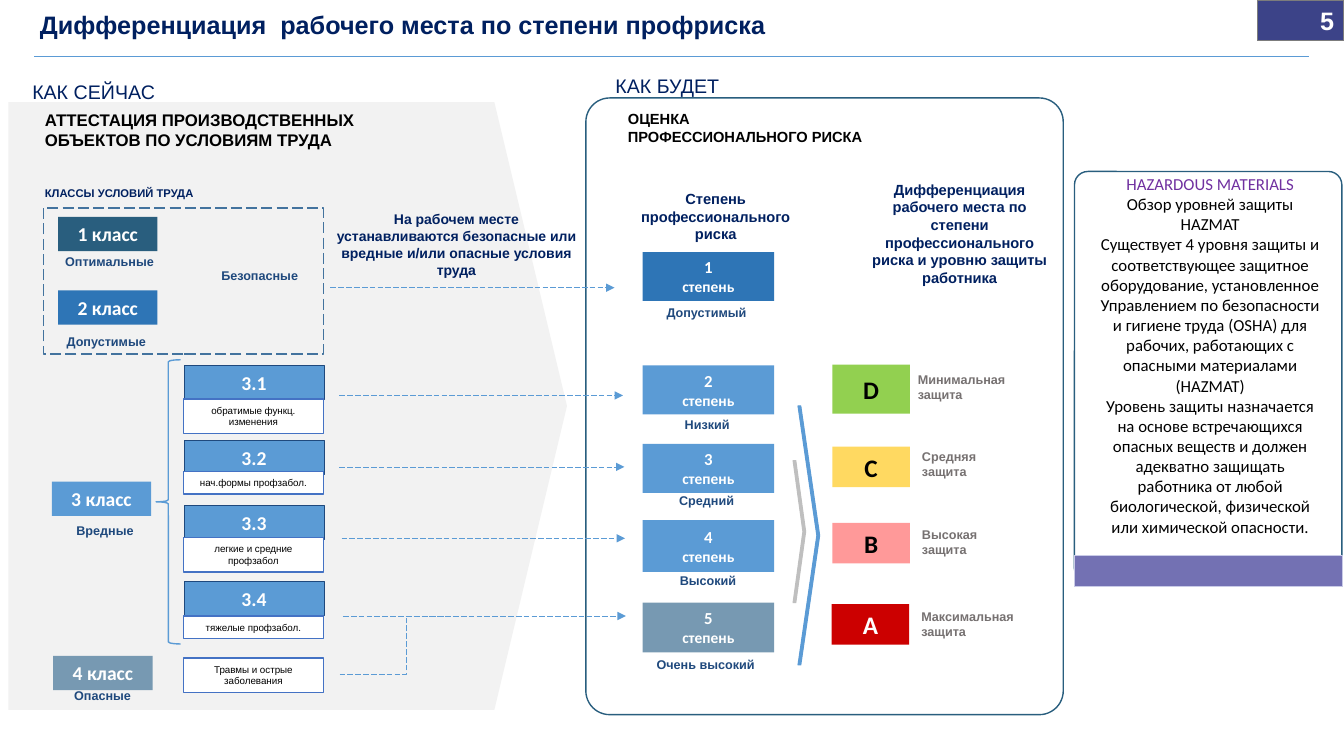
import pptx
import pptx.dml.color
import pptx.enum.dml
import pptx.enum.shapes
import pptx.enum.text
import pptx.oxml.ns
import pptx.util
from lxml import etree

Pt = pptx.util.Pt
Form = pptx.enum.shapes.MSO_SHAPE
Link = pptx.enum.shapes.MSO_CONNECTOR
Align = pptx.enum.text.PP_ALIGN
Anchor = pptx.enum.text.MSO_ANCHOR
LONG_DASH = pptx.enum.dml.MSO_LINE.LONG_DASH
RGB = pptx.dml.color.RGBColor.from_string

COLORS = {
    "navy": "002060", "ink": "1F497D", "black": "000000", "white": "FFFFFF",
    "gray": "767171", "panel": "F2F2F2", "silver": "BFBFBF", "sky": "5B9BD5",
    "blue": "2E75B6", "teal": "295E7E", "steel": "7799B2", "edge": "4472C4",
    "dash": "43739E", "violet": "7030A0", "lilac": "7371B3", "pale": "C9CBE7",
    "indigo": "3C4388", "frame": "7C7C7C", "green": "92D050", "yellow": "FFD961",
    "pink": "FF9999", "red": "CC0000",
}
STYLES = {
    "title": ("Arial", 18, True, "navy", Align.LEFT),
    "number": ("Arial", 18, True, "white", Align.RIGHT),
    "section": ("Arial", 14, False, "navy", Align.LEFT),
    "heading": ("Arial", 12, True, "black", Align.LEFT),
    "risk": ("Arial", 10.5, True, "black", Align.LEFT),
    "column": ("Arial", 10.5, True, "navy", Align.CENTER),
    "remark": ("Arial", 10, True, "navy", Align.CENTER),
    "caption": ("Arial", 8, True, "navy", Align.LEFT),
    "label": ("Arial", 9, True, "ink", Align.LEFT),
    "middle": ("Arial", 9, True, "ink", Align.CENTER),
    "guard": ("Arial", 9, True, "gray", Align.LEFT),
    "detail": ("Arial", 7, False, "black", Align.CENTER),
    "class": ("Calibri", 14, True, "white", Align.CENTER),
    "degree": ("Calibri", 12, True, "white", Align.CENTER),
    "word": ("Calibri", 11, True, "white", Align.CENTER),
    "dark letter": ("Calibri", 18, True, "black", Align.CENTER),
    "light letter": ("Calibri", 18, True, "white", Align.CENTER),
    "hazard": ("Calibri", 12, False, "violet", Align.CENTER),
    "body": ("Calibri", 12, False, "black", Align.CENTER),
}

deck = pptx.Presentation()
deck.slide_width, deck.slide_height = Pt(960), Pt(540)
page = deck.slides.add_slide(deck.slide_layouts[6])


def write(box, text, *styles):
    frame = box.text_frame
    frame.word_wrap = True
    for index, words in enumerate(text.split("\n")):
        para = frame.paragraphs[0] if index == 0 else frame.add_paragraph()
        name, size, bold, color, para.alignment = STYLES[styles[min(index, len(styles) - 1)]]
        span = para.add_run()
        span.text = words
        for key, value in {"name": name, "size": Pt(size), "bold": bold}.items():
            setattr(span.font, key, value)
        span.font.color.rgb = RGB(COLORS[color])


def draw(form, place, fill=None, line=None, weight=0.75, adjust=None):
    box = page.shapes.add_shape(form, *map(Pt, place))
    box.shadow.inherit = False
    box.text_frame.vertical_anchor = Anchor.MIDDLE
    if fill:
        box.fill.solid()
        box.fill.fore_color.rgb = RGB(COLORS[fill])
    else:
        box.fill.background()
    if line:
        box.line.color.rgb = RGB(COLORS[line])
        box.line.width = Pt(weight)
    else:
        box.line.fill.background()
    if adjust:
        box.adjustments[0] = adjust
    return box


draw(Form.PENTAGON, (6, 73, 399, 434), "panel", adjust=0.13)
draw(Form.CHEVRON, (566.5, 329, 9, 101.5), "silver", "silver", adjust=0.78)
draw(Form.CHEVRON, (570, 290, 15.5, 185), "sky", "sky", adjust=0.87)

for text, top, height, fill in [
    ("1", 180, 35, "blue"), ("2", 261, 35, "sky"), ("3", 317, 35, "sky"),
    ("4", 371.5, 37, "sky"), ("5", 430.5, 35.5, "steel"),
]:
    box = draw(Form.RECTANGLE, (459, top, 94, height), fill)
    write(box, text + "\nстепень", "degree", "word")

for text, left, top, height, fill, style in [
    ("D", 594.5, 260.5, 35, "green", "dark letter"),
    ("С", 594.5, 319, 29, "yellow", "dark letter"),
    ("В", 594.5, 373.5, 29, "pink", "dark letter"),
    ("A", 594, 431.5, 29, "red", "light letter"),
]:
    write(draw(Form.RECTANGLE, (left, top, 55.5, height), fill), text, style)

for text, left, top, fill in [
    ("1 класс", 41.5, 155, "teal"), ("2 класс", 41.5, 207.5, "blue"),
    ("3 класс", 37, 344, "sky"), ("4 класс", 38, 468.5, "steel"),
]:
    write(draw(Form.RECTANGLE, (left, top, 71, 24.5), fill), text, "class")

for text, top in [("3.1", 261), ("3.2", 314.5), ("3.3", 361), ("3.4", 415.5)]:
    box = draw(Form.RECTANGLE, (131.5, top, 100, 24.5), "sky", "ink")
    write(box, text, "class")

for text, top, height in [
    ("обратимые функц. изменения", 285, 24.5),
    ("нач.формы профзабол.", 337, 16),
    ("легкие и средние профзабол", 384, 24.5),
    ("тяжелые профзабол.", 440, 16),
    ("Травмы и острые заболевания", 470, 24.5),
]:
    box = draw(Form.RECTANGLE, (131, top, 100, height), "white", "edge", 1)
    write(box, text, "detail")

draw(Form.RECTANGLE, (31, 148.5, 200, 104.5), None, "dash", 1).line.dash_style = LONG_DASH
draw(Form.LEFT_BRACE, (111.5, 257, 17.5, 203), None, "sky", 1)
draw(Form.ROUNDED_RECTANGLE, (418.5, 70, 341, 440.5), None, "teal", 1, 0.05)
draw(Form.ROUNDED_RECTANGLE, (767.5, 122.5, 191, 293), None, "teal", 1, 0.05)
draw(Form.RECTANGLE, (767.5, 397, 191.5, 22), "lilac", "pale")
write(draw(Form.RECTANGLE, (898, 0, 62, 29), "indigo", "frame"), "5", "number")

for kind, start, end, dashed, arrow in [
    (Link.STRAIGHT, (24.5, 40.5), (935, 40.5), False, False),
    (Link.STRAIGHT, (236, 205.5), (439, 205.5), True, True),
    (Link.STRAIGHT, (242.5, 282.5), (445, 282.5), True, True),
    (Link.STRAIGHT, (242.5, 333.5), (446, 333.5), True, True),
    (Link.STRAIGHT, (244, 384.5), (446.5, 384.5), True, True),
    (Link.STRAIGHT, (245, 440), (447, 440), True, True),
    (Link.ELBOW, (242.5, 482), (337.5, 440), True, False),
]:
    link = page.shapes.add_connector(kind, *map(Pt, start + end))
    link.line.color.rgb = RGB(COLORS["sky"])
    link.line.width = Pt(0.5)
    if dashed:
        link.line.dash_style = LONG_DASH
    if arrow:
        tip = etree.SubElement(link.line._get_or_add_ln(), pptx.oxml.ns.qn("a:tailEnd"))
        tip.set("type", "triangle")
    etree.SubElement(link._element.spPr, pptx.oxml.ns.qn("a:effectLst"))

for text, place, *styles in [
    ("Дифференциация  рабочего места по степени профриска", (21.5, 3, 767.5, 29), "title"),
    ("КАК СЕЙЧАС", (16, 53.5, 225, 24), "section"),
    ("КАК БУДЕТ", (432.5, 49.5, 225, 24), "section"),
    ("АТТЕСТАЦИЯ ПРОИЗВОДСТВЕННЫХ ОБЪЕКТОВ ПО УСЛОВИЯМ ТРУДА", (25, 75, 289, 36.5), "heading"),
    ("ОЦЕНКА\nПРОФЕССИОНАЛЬНОГО РИСКА", (441.5, 75, 261, 32.5), "risk"),
    ("КЛАССЫ УСЛОВИЙ ТРУДА", (25, 129.5, 157.5, 17), "caption"),
    ("Оптимальные", (39.5, 178, 80, 18), "label"),
    ("Допустимые", (40.5, 235, 76, 18), "label"),
    ("Безопасные", (151, 188, 80, 18), "label"),
    ("Вредные", (37, 370, 76, 18), "middle"),
    ("Опасные", (39.5, 488, 67.5, 18), "middle"),
    ("На рабочем месте устанавливаются безопасные или вредные и/или опасные условия труда",
     (233, 147, 186, 55.5), "remark"),
    ("Степень профессионального риска", (448.5, 132, 125.5, 45.5), "column"),
    ("Дифференциация рабочего места по степени профессионального риска "
     "и уровню защиты работника", (611, 125.5, 149, 83.5), "column"),
    ("Допустимый", (469, 214.5, 76.5, 18), "label"),
    ("Низкий", (482, 294.5, 48, 18), "label"),
    ("Средний", (478, 348.5, 57, 18), "label"),
    ("Высокий", (478.5, 406, 57, 18), "label"),
    ("Очень высокий", (458, 466, 92, 18), "middle"),
    ("Минимальная\nзащита", (648.5, 262, 81, 29), "guard"),
    ("Средняя защита", (651.5, 317, 65, 29), "guard"),
    ("Высокая защита", (651.5, 373, 65, 29), "guard"),
    ("Максимальная защита", (651, 431.5, 86.5, 29), "guard"),
    ("HAZARDOUS MATERIALS\nОбзор уровней защиты HAZMAT\n"
     "Существует 4 уровня защиты и соответствующее защитное оборудование, установленное "
     "Управлением по безопасности и гигиене труда (OSHA) для рабочих, работающих "
     "с опасными материалами (HAZMAT)\n"
     "Уровень защиты назначается на основе встречающихся опасных веществ и должен адекватно "
     "защищать работника от любой биологической, физической или химической опасности.",
     (777.5, 120.5, 174, 269), "hazard", "body"),
]:
    write(page.shapes.add_textbox(*map(Pt, place)), text, *styles)

deck.save("out.pptx")
